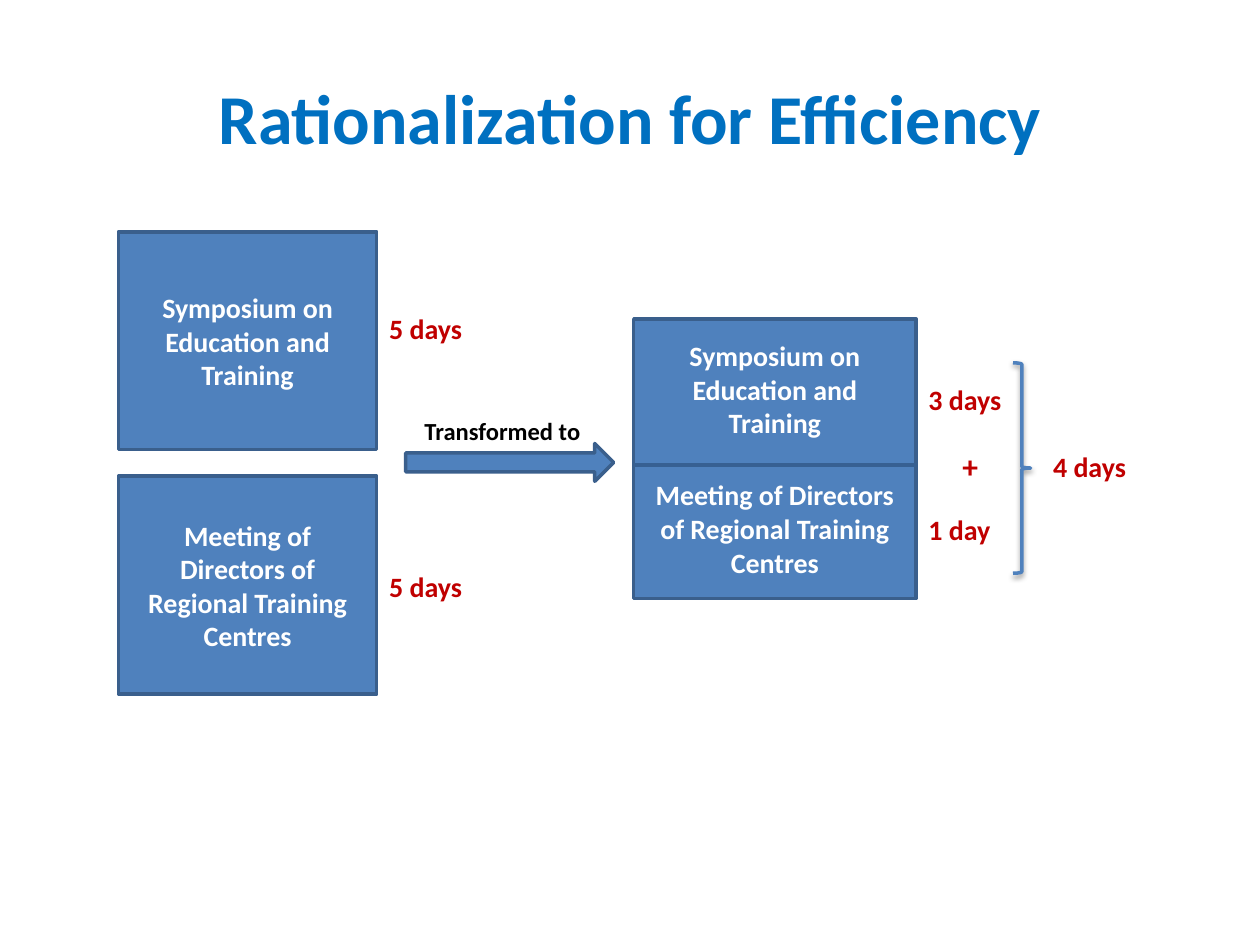
from lxml import etree
from pptx import Presentation
from pptx import util as u
from pptx.dml.color import RGBColor
from pptx.enum import shapes, text
from pptx.oxml import parse_xml
from pptx.oxml.ns import qn

BLUE = RGBColor(0x4F, 0x81, 0xBD)
EDGE = RGBColor(0x3A, 0x5F, 0x8C)
DIVIDER = RGBColor(0x37, 0x60, 0x92)
TITLE_BLUE = RGBColor(0x00, 0x70, 0xC0)
RED = RGBColor(0xC0, 0x00, 0x00)
BLACK = RGBColor(0x00, 0x00, 0x00)
WHITE = RGBColor(0xFF, 0xFF, 0xFF)

deck = Presentation()
deck.slide_width, deck.slide_height = u.Inches(10), u.Inches(7.5)
COL, ROW = deck.slide_width / 100, deck.slide_height / 75
slide = deck.slides.add_slide(deck.slide_layouts[5])


def cells(left, top, width, height):
    return [round(n * unit) for n, unit in zip((left, top, width, height), (COL, ROW, COL, ROW))]


def write(frame, *lines, size=16, color=RED, align=text.PP_ALIGN.LEFT,
          anchor=text.MSO_ANCHOR.TOP, gap=0):
    frame.word_wrap = True
    frame.vertical_anchor = anchor
    for i, line in enumerate(lines):
        paragraph = frame.add_paragraph() if i else frame.paragraphs[0]
        paragraph.alignment = align
        if i:
            paragraph.space_before = u.Pt(gap)
        run = paragraph.add_run()
        run.text = line
        run.font.name, run.font.size, run.font.bold = "Calibri", u.Pt(size), True
        run.font.color.rgb = color


centred = dict(align=text.PP_ALIGN.CENTER, anchor=text.MSO_ANCHOR.MIDDLE)

title = slide.shapes.title
title.left, title.top, title.width, title.height = cells(5, 3, 90, 12.5)
write(title.text_frame, "Rationalization for Efficiency", size=40, color=TITLE_BLUE, **centred)

symposium = "Symposium on Education and Training"
meeting = "Meeting of Directors of Regional Training Centres"
RECT, ARROW = shapes.MSO_SHAPE.RECTANGLE, shapes.MSO_SHAPE.RIGHT_ARROW
for kind, area, events in [
    (RECT, (9.4, 18.4, 20.5, 17.3), [symposium]),
    (RECT, (9.4, 37.8, 20.5, 17.3), [meeting]),
    (ARROW, (32.2, 35.2, 16.5, 3), []),
    (RECT, (50.3, 25.3, 22.4, 22.2), [symposium, meeting]),
]:
    block = slide.shapes.add_shape(kind, *cells(*area))
    block.shadow.inherit = False
    block.fill.solid()
    block.fill.fore_color.rgb = BLUE
    block.line.color.rgb = EDGE
    block.line.width = u.Pt(2)
    write(block.text_frame, *events, color=WHITE, gap=22, **centred)

left, level, width, _ = cells(50.3, 36.9, 22.4, 0)
divider = slide.shapes.add_connector(shapes.MSO_CONNECTOR.STRAIGHT, left, level, left + width, level)
divider.line.color.rgb = DIVIDER
divider.line.width = u.Pt(2.25)
etree.SubElement(divider._element.spPr, qn("a:effectLst"))

brace = slide.shapes.add_shape(shapes.MSO_SHAPE.RIGHT_BRACE, *cells(80.4, 28.8, 1.4, 16.7))
brace.fill.background()
brace.line.color.rgb = BLUE
brace.line.width = u.Pt(2)
brace.shadow.inherit = False
brace._element.spPr.find(qn("a:effectLst")).append(parse_xml(
    '<a:outerShdw xmlns:a="http://schemas.openxmlformats.org/drawingml/2006/main" '
    'blurRad="39370" dist="20320" dir="5400000" rotWithShape="0">'
    '<a:srgbClr val="000000"><a:alpha val="38000"/></a:srgbClr></a:outerShdw>'))

for label, area, look in [
    ("Transformed to", (32.7, 32.5, 15.1, 3.4), dict(size=14, color=BLACK)),
    ("5 days", (29.9, 24.2, 9, 3.7), {}),
    ("5 days", (29.9, 44.7, 9, 3.7), {}),
    ("3 days", (72.7, 29.9, 9, 3.7), {}),
    ("1 day", (72.7, 40.2, 9, 3.7), {}),
    ("4 days", (82.6, 35.2, 9, 3.7), {}),
    ("+", (72.5, 35, 9, 4), dict(size=18, align=text.PP_ALIGN.CENTER)),
]:
    caption = slide.shapes.add_textbox(*cells(*area))
    write(caption.text_frame, label, **look)
    caption.text_frame.auto_size = text.MSO_AUTO_SIZE.SHAPE_TO_FIT_TEXT

deck.save("out.pptx")
